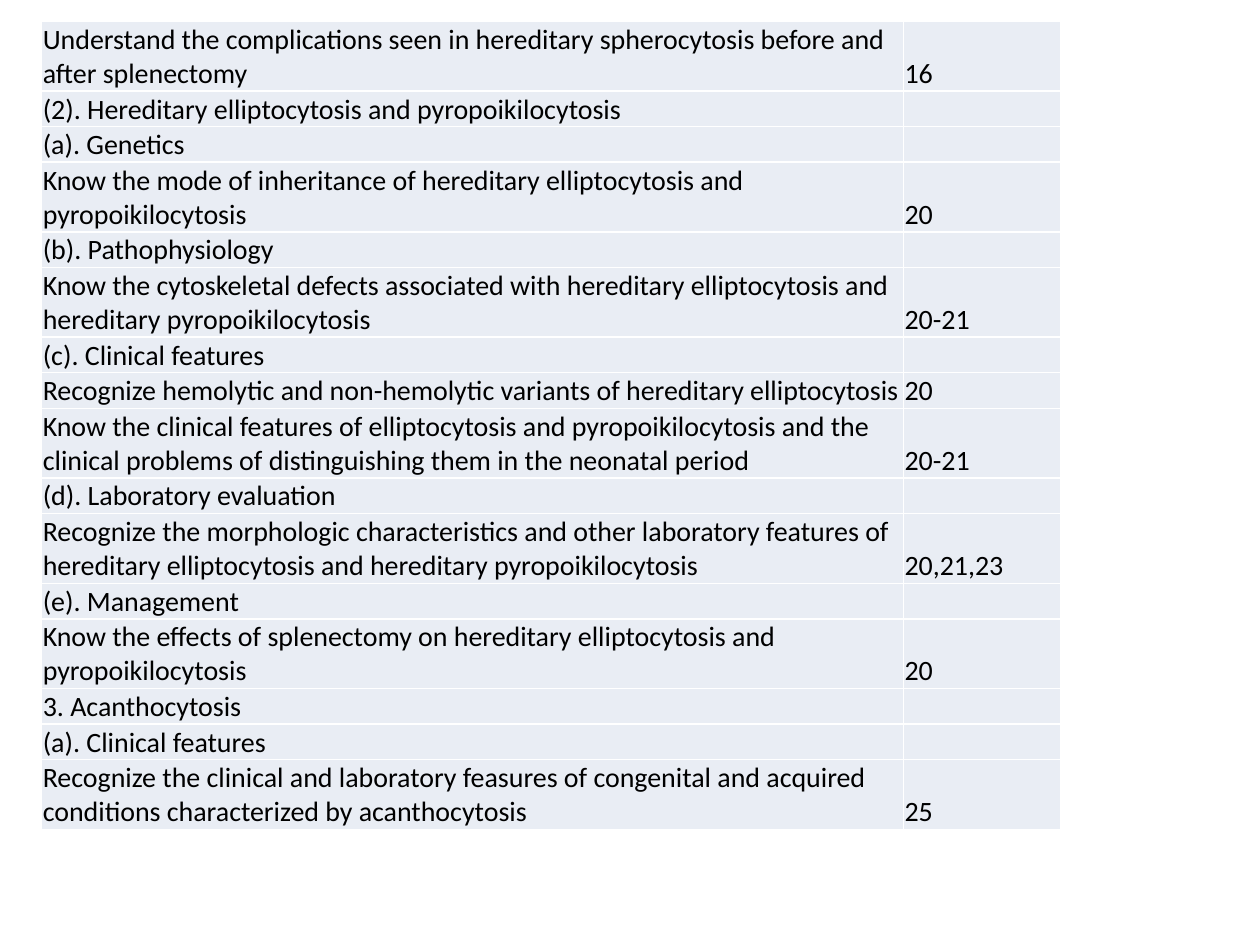
from pptx import Presentation
from pptx.dml.color import RGBColor
from pptx.enum.text import MSO_ANCHOR
from pptx.oxml import parse_xml
from pptx.oxml.ns import nsdecls
from pptx.util import Inches, Pt

BOTTOM = MSO_ANCHOR.BOTTOM
BLANK_LAYOUT = 6
ONE_LINE, TWO_LINES = 0.28, 0.55
LINE_CAPACITY = 75  # characters that fit on one line of the topic column

OBJECTIVES = [
    ("Understand the complications seen in hereditary spherocytosis before and after splenectomy", "16"),
    ("(2). Hereditary elliptocytosis and pyropoikilocytosis", ""),
    ("(a). Genetics", ""),
    ("Know the mode of inheritance of hereditary elliptocytosis and pyropoikilocytosis", "20"),
    ("(b). Pathophysiology", ""),
    ("Know the cytoskeletal defects associated with hereditary elliptocytosis and hereditary pyropoikilocytosis", "20-21"),
    ("(c). Clinical features", ""),
    ("Recognize hemolytic and non-hemolytic variants of hereditary elliptocytosis", "20"),
    ("Know the clinical features of elliptocytosis and pyropoikilocytosis and the clinical problems of distinguishing them in the neonatal period", "20-21"),
    ("(d). Laboratory evaluation", ""),
    ("Recognize the morphologic characteristics and other laboratory features of hereditary elliptocytosis and hereditary pyropoikilocytosis", "20,21,23"),
    ("(e). Management", ""),
    ("Know the effects of splenectomy on hereditary elliptocytosis and pyropoikilocytosis", "20"),
    ("3. Acanthocytosis", ""),
    ("(a). Clinical features", ""),
    ("Recognize the clinical and laboratory feasures of congenital and acquired conditions characterized by acanthocytosis", "25"),
]


def color(hex_value):
    return RGBColor.from_string(hex_value)


class SlideBuilder:
    font = "Calibri"
    size = 16
    ink = "000000"
    cell_fill = "E9EDF4"
    border = "FFFFFF"

    def __init__(self, slide):
        self.slide = slide

    def table(self, left, top, widths, heights, rows):
        frame = self.slide.shapes.add_table(
            len(rows), len(widths), Inches(left), Inches(top),
            Inches(sum(widths)), Inches(sum(heights)))
        table = frame.table
        table.first_row = table.horz_banding = False
        for column, width in zip(table.columns, widths):
            column.width = Inches(width)
        for row, height, texts in zip(table.rows, heights, rows):
            row.height = Inches(height)
            for cell, text in zip(row.cells, texts):
                self.cell(cell, text)

    def cell(self, cell, text):
        cell.margin_left = cell.margin_right = cell.margin_top = Inches(0.01)
        cell.margin_bottom = 0
        cell.vertical_anchor = BOTTOM
        self.borders(cell)
        cell.fill.solid()
        cell.fill.fore_color.rgb = color(self.cell_fill)
        para = cell.text_frame.paragraphs[0]
        if text:
            span = para.add_run()
            span.text = text
            span.font.name = self.font
            span.font.size = Pt(self.size)
            span.font.color.rgb = color(self.ink)
        else:
            # The paragraph end mark sets the line height of an empty cell.
            para._p.append(parse_xml(
                f'<a:endParaRPr {nsdecls("a")} sz="{self.size * 100}">'
                f'<a:latin typeface="{self.font}"/></a:endParaRPr>'))

    def borders(self, cell):
        properties = cell._tc.get_or_add_tcPr()
        for side in ("lnL", "lnR", "lnT", "lnB"):
            properties.append(parse_xml(
                f'<a:{side} {nsdecls("a")} w="{Pt(1)}"><a:solidFill>'
                f'<a:srgbClr val="{self.border}"/></a:solidFill></a:{side}>'))


def main():
    deck = Presentation()
    deck.slide_width, deck.slide_height = Inches(10), Inches(7.5)
    page = SlideBuilder(deck.slides.add_slide(deck.slide_layouts[BLANK_LAYOUT]))
    heights = [TWO_LINES if len(topic) > LINE_CAPACITY else ONE_LINE
               for topic, _ in OBJECTIVES]
    page.table(0.33, 0.17, [6.84, 1.25], heights, OBJECTIVES)
    deck.save("out.pptx")


if __name__ == "__main__":
    main()
